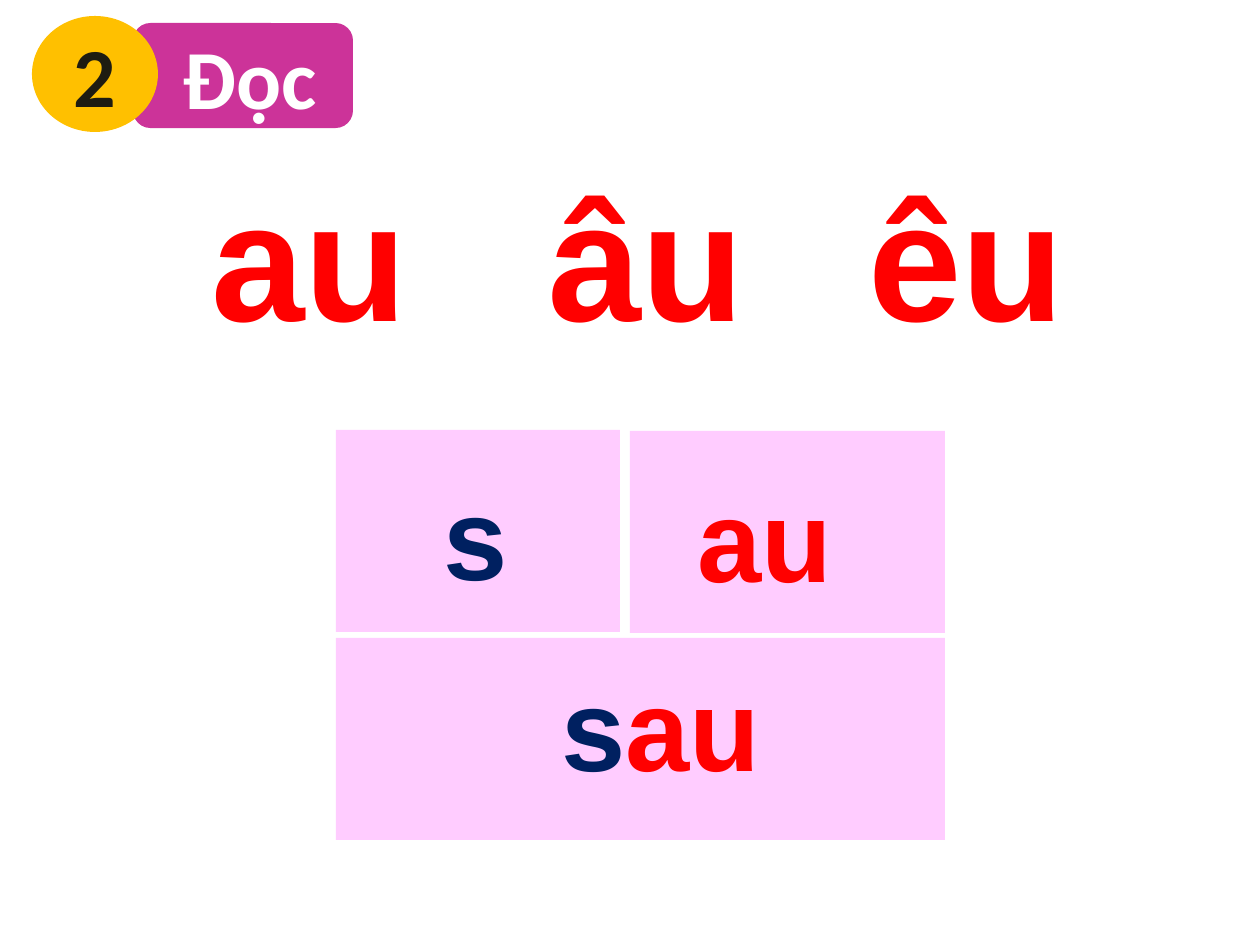
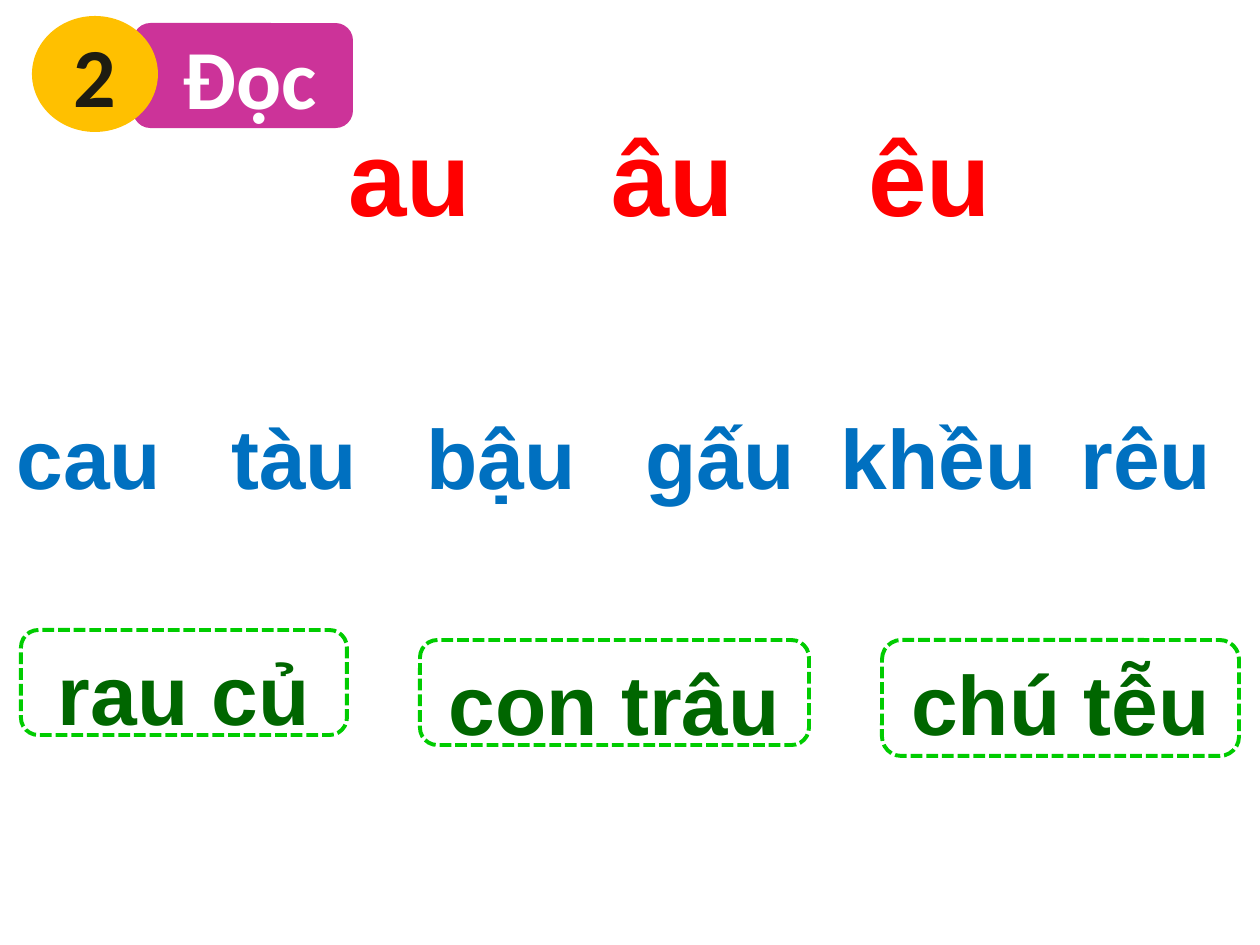
from lxml import etree
from pptx import Presentation
from pptx.dml.color import RGBColor
from pptx.enum.dml import MSO_LINE
from pptx.enum.shapes import MSO_SHAPE
from pptx.enum.text import MSO_ANCHOR, MSO_AUTO_SIZE, PP_ALIGN
from pptx.oxml.ns import qn
from pptx.util import Emu, Pt

RECT, ROUNDED, OVAL = MSO_SHAPE.RECTANGLE, MSO_SHAPE.ROUNDED_RECTANGLE, MSO_SHAPE.OVAL
TOP, MIDDLE = MSO_ANCHOR.TOP, MSO_ANCHOR.MIDDLE
LEFT, CENTER = PP_ALIGN.LEFT, PP_ALIGN.CENTER
NO_FIT, GROW = MSO_AUTO_SIZE.NONE, MSO_AUTO_SIZE.SHAPE_TO_FIT_TEXT
DASH = MSO_LINE.SQUARE_DOT

PX_PER_INCH = 126
TITLE_ONLY = 5
HEAD_FONT, BODY_FONT = "Calibri", "Arial"
MAGENTA, AMBER, INK, WHITE = "CC3399", "FFC000", "1E1C11", "FFFFFF"
RED, NAVY, PINK = "FF0000", "002060", "FFCCFF"
BLUE, GREEN, LIME = "0070C0", "006600", "00CC00"

VOWELS = ["au", "âu", "êu"]


def px(length):
    return Emu(round(length * 914400 / PX_PER_INCH))


def color(value):
    return RGBColor.from_string(value)


def place(part, box):
    part.left, part.top, part.width, part.height = map(px, box)


def write(part, runs, size, font=BODY_FONT, align=LEFT, anchor=TOP, fit=NO_FIT):
    """Fill one bold paragraph from (text, colour) runs."""
    frame = part.text_frame
    frame.word_wrap = True
    frame.auto_size = fit
    frame.vertical_anchor = anchor
    paragraph = frame.paragraphs[0]
    paragraph.alignment = align
    for text, ink in runs:
        run = paragraph.add_run()
        run.text = text
        run.font.name = font
        run.font.size = Pt(size)
        run.font.bold = True
        run.font.color.rgb = color(ink)
    return paragraph


def add_text(slide, box, runs, size):
    label = slide.shapes.add_textbox(*map(px, box))
    return write(label, runs, size, fit=GROW)


def add_panel(slide, kind, box, fill=None, line=None):
    panel = slide.shapes.add_shape(kind, *map(px, box))
    panel.shadow.inherit = False
    if fill:
        panel.fill.solid()
        panel.fill.fore_color.rgb = color(fill)
    else:
        panel.fill.background()
    if line:
        panel.line.color.rgb = color(line)
        panel.line.width = Pt(2.25)
        panel.line.dash_style = DASH
    else:
        panel.line.fill.background()
    return panel


def add_heading(slide, box):
    """Numbered disc overlapping the title band."""
    x, y, w, h = box
    band = add_panel(slide, ROUNDED, (x + 101, y + 7, w - 101, 105), MAGENTA)
    title = slide.shapes.title
    place(title, (x + 115, y + 7, w - 115, 105))
    write(title, [("Đọc", WHITE)], 48, HEAD_FONT, CENTER, MIDDLE)
    band.element.addnext(title.element)
    disc = add_panel(slide, OVAL, (x, y, 126, h), AMBER)
    write(disc, [("2", INK)], 48, HEAD_FONT, CENTER, MIDDLE)


def add_vowels(slide, lefts, top, height, size):
    for vowel, left in zip(VOWELS, lefts):
        add_text(slide, (left, top, 231, height), [(vowel, RED)], size)


def add_blending_chart(slide, box):
    """Initial and rhyme above, the whole syllable below."""
    x, y, w, h = box
    row = 202
    for tile in [(x, y, 284, row), (x + 294, y + 1, w - 294, row),
                 (x, y + h - row, w, row)]:
        add_panel(slide, RECT, tile, PINK)
    initial, rhyme = ("s", NAVY), ("au", RED)
    add_text(slide, (x + 95, y + 29, 91, 152), [initial], 66)
    add_text(slide, (x + 349, y + 31, 187, 152), [rhyme], 66)
    add_text(slide, (x + 213, y + 220, 240, 152), [initial, rhyme], 66)


def add_words(slide, box):
    """One line of words, set apart by tab stops."""
    words = ["cau", "tàu", "bậu", "gấu", "khều", "rêu"]
    line = add_text(slide, box, [("\t".join(words), BLUE)], 48)
    stops = etree.SubElement(line._p.get_or_add_pPr(), qn("a:tabLst"))
    for stop in [215, 410, 629, 824, 1064]:
        etree.SubElement(stops, qn("a:tab"), pos=str(px(stop)), algn="l")


def add_phrases(slide, box):
    """Dashed frames, each around one phrase."""
    x, y = box[:2]
    for phrase, left, top, width, height in [
        ("rau củ", 0, 0, 326, 105),
        ("con trâu", 399, 10, 389, 105),
        ("chú tễu", 861, 10, 357, 116),
    ]:
        frame = add_panel(slide, ROUNDED, (x + left, y + top, width, height), line=LIME)
        write(frame, [(phrase, GREEN)], 48, align=CENTER)


def new_slide(deck):
    slide = deck.slides.add_slide(deck.slide_layouts[TITLE_ONLY])
    add_heading(slide, (32, 16, 321, 116))
    return slide


def build_blending_slide(deck):
    slide = new_slide(deck)
    add_vowels(slide, [199, 536, 856], 147, 217, 96)
    add_blending_chart(slide, (336, 430, 609, 410))


def build_words_slide(deck):
    slide = new_slide(deck)
    add_vowels(slide, [336, 599, 856], 105, 140, 60)
    add_words(slide, (4, 399, 1252, 115))
    add_phrases(slide, (21, 630, 1218, 126))


def main():
    deck = Presentation()
    deck.slide_width, deck.slide_height = px(1260), px(945)
    build_blending_slide(deck)
    build_words_slide(deck)
    deck.save("out.pptx")


if __name__ == "__main__":
    main()
